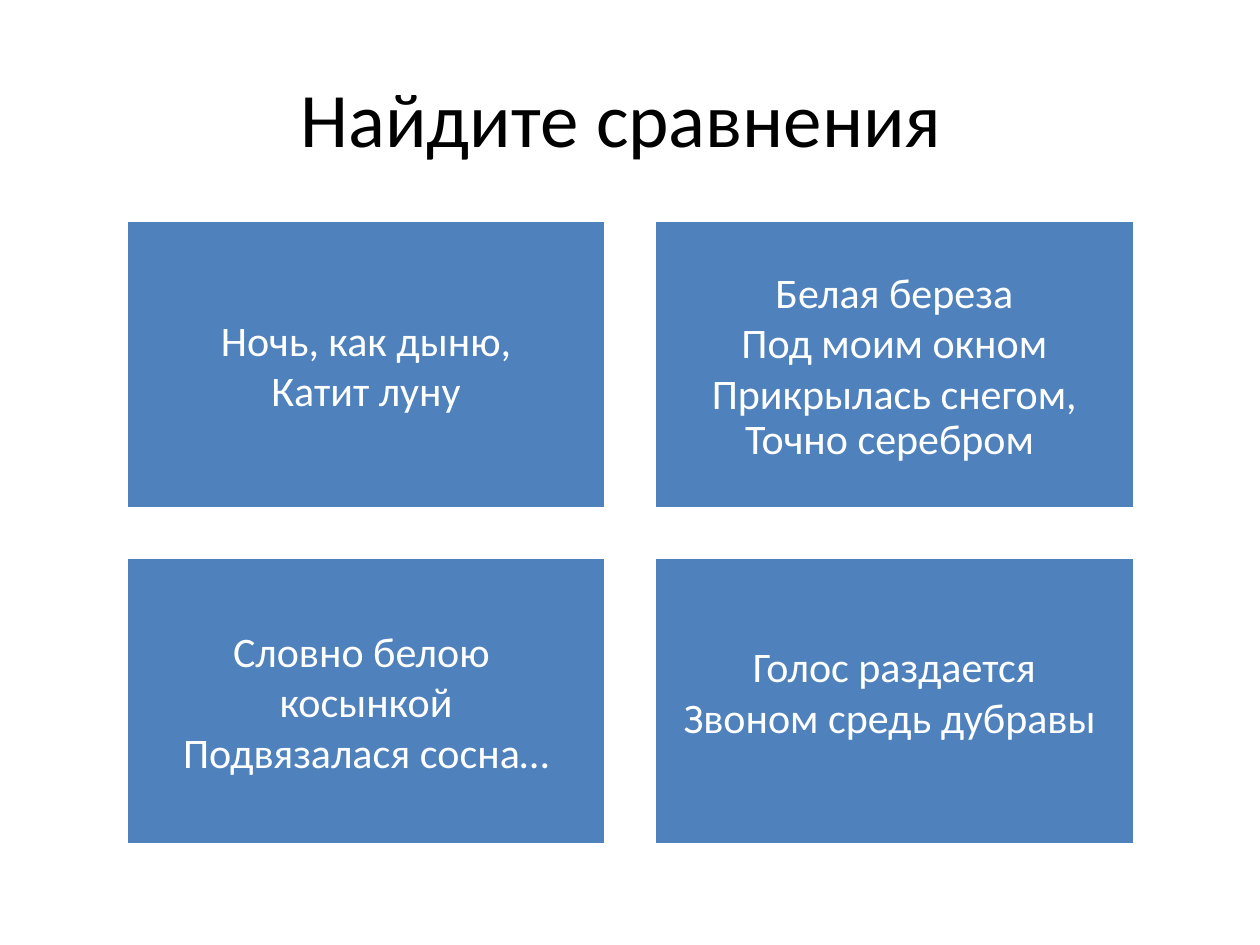
from dataclasses import dataclass

from pptx import Presentation
from pptx.dml.color import RGBColor
from pptx.enum.shapes import MSO_SHAPE
from pptx.enum.text import MSO_ANCHOR, PP_ALIGN
from pptx.util import Cm, Pt

RECTANGLE = MSO_SHAPE.RECTANGLE
MIDDLE = MSO_ANCHOR.MIDDLE
CENTER = PP_ALIGN.CENTER
TITLE_ONLY = 5


@dataclass(frozen=True)
class Theme:
    font: str = "Calibri"
    title_size: int = 44
    verse_size: int = 24
    ink: RGBColor = RGBColor(0, 0, 0)
    paper: RGBColor = RGBColor(255, 255, 255)
    card: RGBColor = RGBColor(0x4F, 0x81, 0xBD)


@dataclass(frozen=True)
class Verse:
    lines: tuple[str, ...]
    last_spacing: float = 1.0
    bottom_inset: float = 0.25


THEME = Theme()
COLUMNS = 2
GRID_LEFT, GRID_TOP = 2.54, 4.45
CARD_WIDTH, CARD_HEIGHT, GAP = 9.68, 5.81, 0.97
INSET = 0.25

VERSES = (
    Verse(("Ночь, как дыню,", "Катит луну")),
    Verse(("Белая береза", "Под моим окном", "Прикрылась снегом,",
           "Точно серебром "), last_spacing=0.9),
    Verse(("Словно белою \vкосынкой", "Подвязалася сосна…")),
    Verse(("Голос раздается", "Звоном средь дубравы "), bottom_inset=0.65),
)


def style_paragraph(para, size: int, color: RGBColor) -> None:
    para.alignment = CENTER
    para.font.name = THEME.font
    para.font.size = Pt(size)
    para.font.color.rgb = color


def add_title(page, text: str) -> None:
    title = page.shapes.title
    title.left, title.top = Cm(1.27), Cm(0.76)
    title.width, title.height = Cm(22.86), Cm(3.18)
    frame = title.text_frame
    frame.text = text
    frame.vertical_anchor = MIDDLE
    style_paragraph(frame.paragraphs[0], THEME.title_size, THEME.ink)


def add_card(page, verse: Verse, row: int, column: int) -> None:
    card = page.shapes.add_shape(
        RECTANGLE,
        Cm(GRID_LEFT + column * (CARD_WIDTH + GAP)),
        Cm(GRID_TOP + row * (CARD_HEIGHT + GAP)),
        Cm(CARD_WIDTH), Cm(CARD_HEIGHT),
    )
    card.shadow.inherit = False
    card.fill.solid()
    card.fill.fore_color.rgb = THEME.card
    card.line.color.rgb = THEME.paper
    card.line.width = Pt(2)

    frame = card.text_frame
    frame.word_wrap = True
    frame.vertical_anchor = MIDDLE
    frame.margin_left = frame.margin_right = frame.margin_top = Cm(INSET)
    frame.margin_bottom = Cm(verse.bottom_inset)
    frame.text = "\n".join(verse.lines)
    for para in frame.paragraphs:
        style_paragraph(para, THEME.verse_size, THEME.paper)
    frame.paragraphs[-1].line_spacing = verse.last_spacing


def main() -> None:
    deck = Presentation()
    deck.slide_width, deck.slide_height = Cm(25.4), Cm(19.05)
    page = deck.slides.add_slide(deck.slide_layouts[TITLE_ONLY])
    add_title(page, "Найдите сравнения ")
    for index, verse in enumerate(VERSES):
        add_card(page, verse, *divmod(index, COLUMNS))
    deck.save("out.pptx")


if __name__ == "__main__":
    main()
